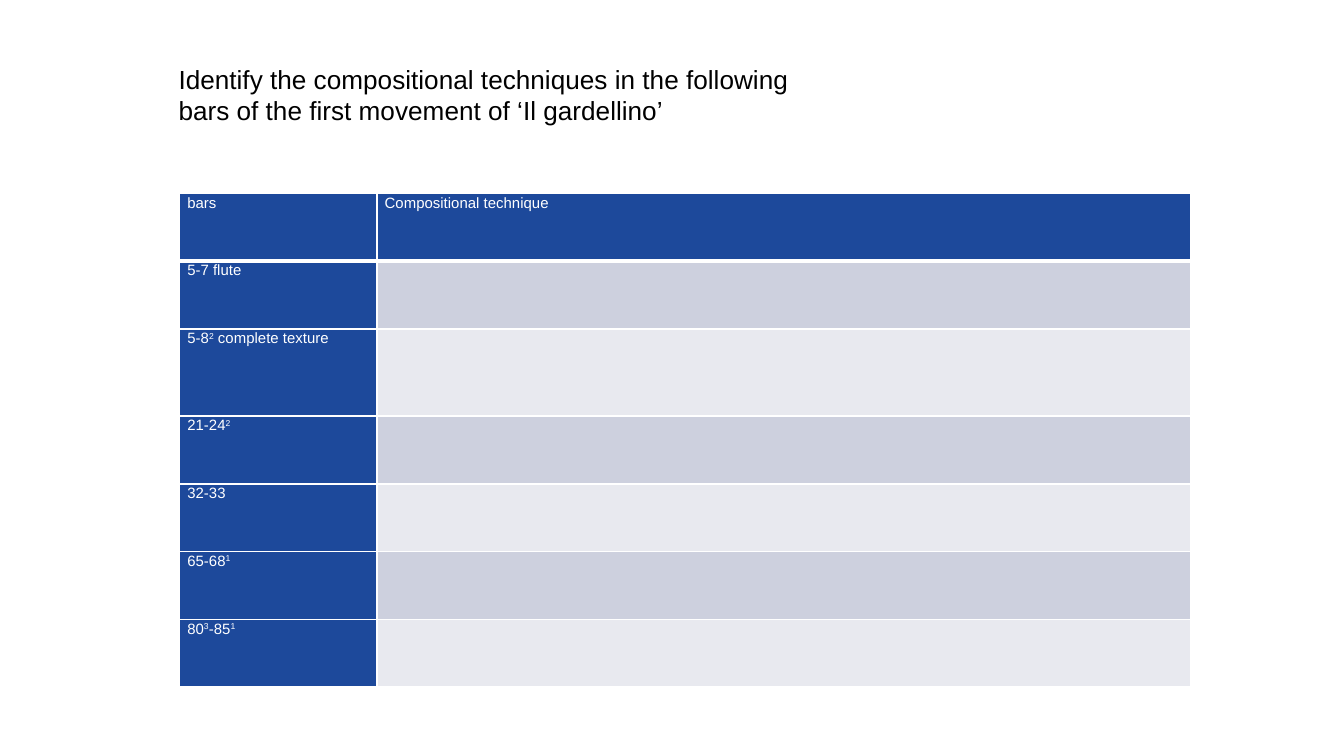
from lxml.etree import SubElement as Sub
from pptx import Presentation
from pptx.dml.color import RGBColor
from pptx.enum.text import MSO_ANCHOR as Anchor, MSO_AUTO_SIZE as Fit, PP_ALIGN as Align
from pptx.oxml.ns import qn
from pptx.util import Cm, Pt

BLUE, WHITE, BLACK = "1D499B", "FFFFFF", "000000"
BANDS = ["CDD0DE", "E8E9EF"]
TITLE = ("Identify the compositional techniques in the following "
         "bars of the first movement of ‘Il gardellino’")
HEADS = ["bars", "Compositional technique"]
BARS = ["5-7 flute", "5-8|2| complete texture", "21-24|2|", "32-33",
        "65-68|1|", "80|3|-85|1|"]
COLS = [3.73, 15.39]
ROWS = [1.28, 1.28, 1.65, 1.28, 1.28, 1.28, 1.28]


def color(code):
    return RGBColor.from_string(code)


def apply(item, values):
    for name, value in values.items():
        setattr(item, name, value)


def style(font, size, code):
    apply(font, {"name": "Arial", "size": Pt(size), "bold": False})
    font.color.rgb = color(code)


def add_title(slide):
    title = slide.shapes.title
    apply(title, {"left": Cm(3.12), "top": Cm(1.07),
                  "width": Cm(12.7), "height": Cm(1.45)})
    frame = title.text_frame
    frame.text = TITLE
    apply(frame, {"word_wrap": True, "auto_size": Fit.SHAPE_TO_FIT_TEXT,
                  "vertical_anchor": Anchor.TOP})
    para = frame.paragraphs[0]
    para.alignment = Align.LEFT
    style(para.runs[0].font, 14, BLACK)


def fill_cell(cell, code):
    cell.fill.solid()
    cell.fill.fore_color.rgb = color(code)


def add_edges(cell, base):
    props = cell._tc.get_or_add_tcPr()
    widths = {"lnL": 1, "lnR": 1, "lnT": 1, "lnB": base}
    for spot, (tag, width) in enumerate(widths.items()):
        line = Sub(props, qn(f"a:{tag}"), w=str(Pt(width)))
        solid = Sub(line, qn("a:solidFill"))
        Sub(solid, qn("a:srgbClr"), val=WHITE)
        props.insert(spot, line)


def write(cell, text):
    apply(cell, {"margin_left": Cm(0.15), "margin_right": Cm(0.15),
                 "margin_top": 0, "margin_bottom": 0})
    para = cell.text_frame.paragraphs[0]
    para.line_spacing = 1.07
    for spot, part in enumerate(text.split("|")):
        if part:
            run = para.add_run()
            run.text = part
            style(run.font, 8, WHITE)
            if spot % 2:
                run.font._element.set("baseline", "30000")


def add_grid(slide):
    frame = slide.shapes.add_table(len(ROWS), len(COLS), Cm(3.39), Cm(3.65),
                                   Cm(sum(COLS)), Cm(sum(ROWS)))
    table = frame.table
    apply(table, {"first_row": True, "first_col": True})
    for col, width in zip(table.columns, COLS):
        col.width = Cm(width)
    texts = [HEADS] + [[bar, ""] for bar in BARS]
    for row, (height, line) in enumerate(zip(ROWS, texts)):
        table.rows[row].height = Cm(height)
        for col, text in enumerate(line):
            cell = table.cell(row, col)
            fill_cell(cell, BLUE if text else BANDS[(row - 1) % 2])
            add_edges(cell, 1 if row else 3)
            if text:
                write(cell, text)


def main():
    deck = Presentation()
    apply(deck, {"slide_width": Cm(25.4), "slide_height": Cm(14.28)})
    slide = deck.slides.add_slide(deck.slide_layouts[5])
    add_grid(slide)
    add_title(slide)
    deck.save("out.pptx")


if __name__ == "__main__":
    main()
